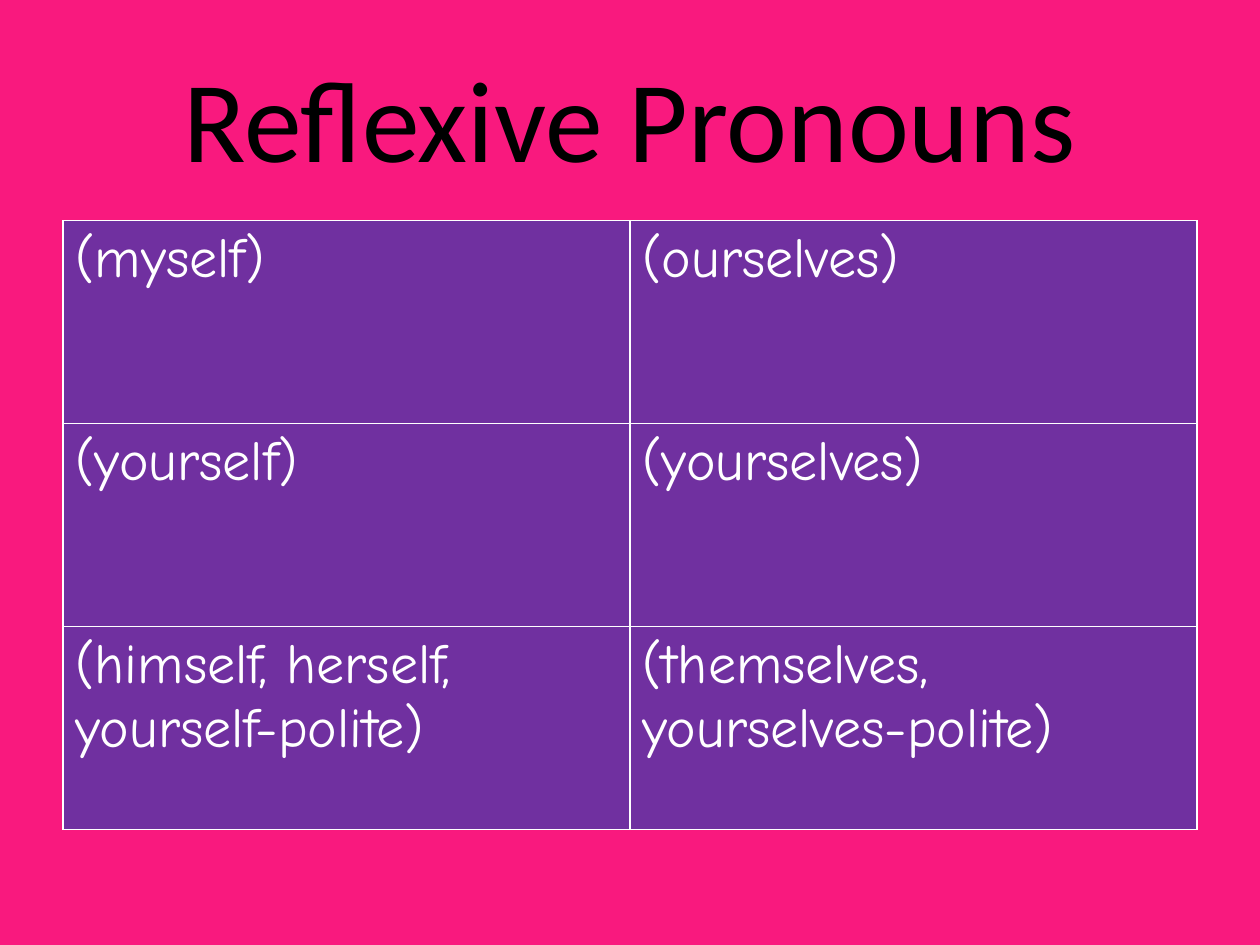
import pptx
import pptx.util
import pptx.dml.color
import pptx.enum.text
import lxml.etree
from pptx.util import Cm, Pt
from pptx.dml.color import RGBColor

# Content
TITLE = "Reflexive Pronouns"
PRONOUNS = [
    ("(myself)", "(ourselves)"),
    ("(yourself)", "(yourselves)"),
    ("(himself, herself, yourself-polite)", "(themselves, yourselves-polite)"),
]

# Look
PINK = RGBColor(0xF9, 0x19, 0x7E)
PURPLE = RGBColor(0x70, 0x30, 0xA0)
WHITE = RGBColor(0xFF, 0xFF, 0xFF)
BLACK = RGBColor(0x00, 0x00, 0x00)
LEFT, WIDTH = Cm(1.27), Cm(22.86)
GRID_TOP, ROW_HEIGHT = Cm(4.45), Cm(4.09)


def style(paragraph, font_name, size, color):
    paragraph.font.name = font_name
    paragraph.font.size = Pt(size)
    paragraph.font.color.rgb = color


def add_borders(cell, color, width):
    """Draw all four cell borders; they must come before the fill."""
    properties = cell._tc.get_or_add_tcPr()
    for position, side in enumerate(("lnL", "lnR", "lnT", "lnB")):
        line = lxml.etree.Element(pptx.oxml.ns.qn("a:" + side), w=str(width))
        fill = lxml.etree.SubElement(line, pptx.oxml.ns.qn("a:solidFill"))
        lxml.etree.SubElement(fill, pptx.oxml.ns.qn("a:srgbClr"), val=str(color))
        properties.insert(position, line)


def main():
    deck = pptx.Presentation()
    deck.slide_width, deck.slide_height = Cm(25.4), Cm(19.05)
    slide = deck.slides.add_slide(deck.slide_layouts[5])
    slide.background.fill.solid()
    slide.background.fill.fore_color.rgb = PINK

    # Title
    heading = slide.shapes.title
    heading.left, heading.top, heading.width, heading.height = LEFT, Cm(0.76), WIDTH, Cm(3.18)
    heading.text_frame.text = TITLE
    heading.text_frame.vertical_anchor = pptx.enum.text.MSO_ANCHOR.MIDDLE
    heading.text_frame.paragraphs[0].alignment = pptx.enum.text.PP_ALIGN.CENTER
    style(heading.text_frame.paragraphs[0], "Calibri", 66, BLACK)

    # Pronoun grid: singular on the left, plural on the right
    row_count, column_count = len(PRONOUNS), len(PRONOUNS[0])
    grid = slide.shapes.add_table(row_count, column_count, LEFT, GRID_TOP,
                                  WIDTH, ROW_HEIGHT * row_count).table
    grid.first_row = grid.horz_banding = False
    for row, pronouns in enumerate(PRONOUNS):
        for column, pronoun in enumerate(pronouns):
            cell = grid.cell(row, column)
            cell.text = pronoun
            cell.fill.solid()
            cell.fill.fore_color.rgb = PURPLE
            add_borders(cell, WHITE, Pt(1))
            style(cell.text_frame.paragraphs[0], "Comic Neue", 32, WHITE)

    deck.save("out.pptx")


if __name__ == "__main__":
    main()
